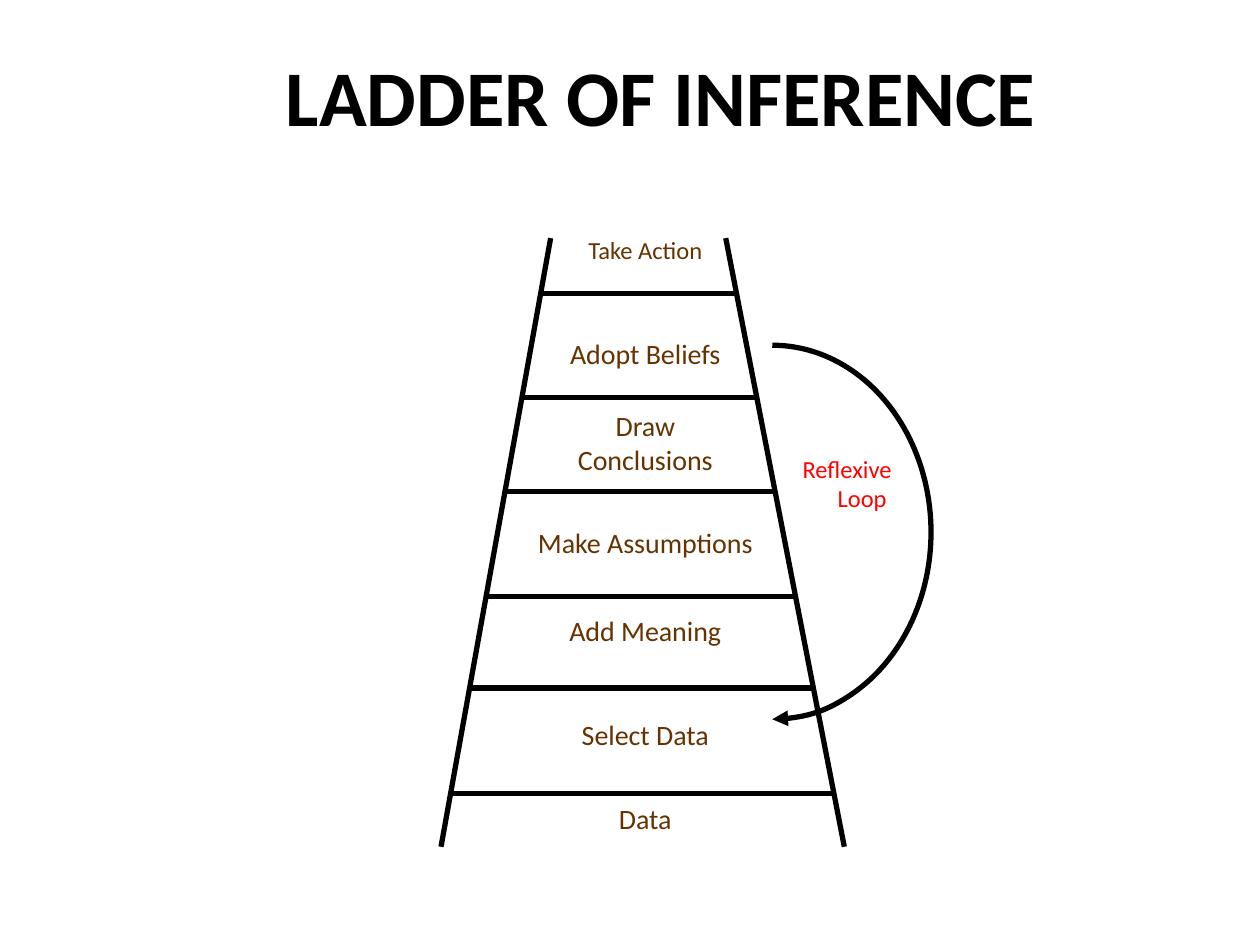
from lxml import etree
from pptx import Presentation
from pptx.dml.color import RGBColor
from pptx.enum.shapes import MSO_CONNECTOR, MSO_SHAPE
from pptx.enum.text import MSO_ANCHOR, PP_ALIGN
from pptx.oxml.ns import qn
from pptx.util import Cm, Pt

LEFT, CENTER = PP_ALIGN.LEFT, PP_ALIGN.CENTER
MIDDLE = MSO_ANCHOR.MIDDLE
STRAIGHT = MSO_CONNECTOR.STRAIGHT
ARC = MSO_SHAPE.ARC

BLACK = RGBColor(0x00, 0x00, 0x00)
BROWN = RGBColor(0x66, 0x33, 0x00)
RED = RGBColor(0xFF, 0x00, 0x00)

TITLE_FONT = {"name": "Calibri", "size": Pt(45), "bold": True}
TOP_STEP_FONT = {"name": "Calibri", "size": Pt(14)}
STEP_FONT = {"name": "Calibri", "size": Pt(16)}
LOOP_FONT = {"name": "Calibri", "size": Pt(14)}

# Step wording, font and space above in points, from the top of the ladder
STEPS = [
    ("Take Action", TOP_STEP_FONT, 0),
    ("Adopt Beliefs", STEP_FONT, 41),
    ("Draw", STEP_FONT, 22),
    ("Conclusions", STEP_FONT, 0),
    ("Make Assumptions", STEP_FONT, 28.5),
    ("Add Meaning", STEP_FONT, 31),
    ("Select Data", STEP_FONT, 40.5),
    ("Data", STEP_FONT, 28.5),
]
# Depth of each rung below the top of the rails, in cm
RUNGS = [1.12, 3.21, 5.11, 7.23, 9.07, 11.19]


def write_line(paragraph, wording, font, color, align=CENTER, space=0):
    run = paragraph.add_run()
    run.text = wording
    for attribute, value in font.items():
        setattr(run.font, attribute, value)
    run.font.color.rgb = color
    paragraph.alignment = align
    paragraph.space_before = Pt(space)


def add_text(slide, left, top, width, height, lines):
    frame = slide.shapes.add_textbox(
        Cm(left), Cm(top), Cm(width), Cm(height)).text_frame
    frame.word_wrap = True
    for index, line in enumerate(lines):
        paragraph = frame.add_paragraph() if index else frame.paragraphs[0]
        write_line(paragraph, *line)


def add_bar(slide, x1, y1, x2, y2):
    bar = slide.shapes.add_connector(
        STRAIGHT, Cm(x1), Cm(y1), Cm(x2), Cm(y2))
    bar.line.color.rgb = BLACK
    bar.line.width = Pt(3)
    etree.SubElement(bar._element.spPr, qn("a:effectLst"))


def add_title(slide, left, top, width, height):
    title = slide.shapes.title
    title.left, title.top = Cm(left), Cm(top)
    title.width, title.height = Cm(width), Cm(height)
    title.text_frame.vertical_anchor = MIDDLE
    write_line(title.text_frame.paragraphs[0], "LADDER OF INFERENCE",
               TITLE_FONT, BLACK)


def add_ladder(slide, left, top, width, height):
    # Steps between the rungs
    add_text(slide, left + 0.74, top - 0.18, 6.76, 14.43,
             [(wording, font, BROWN, CENTER, space)
              for wording, font, space in STEPS])

    # Rails lean towards each other at the top
    left_lean, right_lean = 2.21, 2.39
    right = left + width
    add_bar(slide, left + left_lean, top, left, top + height)
    add_bar(slide, right - right_lean, top, right, top + height)

    # Rungs reach from rail to rail
    for depth in RUNGS:
        rise = 1 - depth / height
        add_bar(slide, left + left_lean * rise, top + depth,
                right - right_lean * rise, top + depth)


def add_reflexive_loop(slide, left, top, width, height):
    # Right half of an ellipse, ending in an arrowhead
    loop = slide.shapes.add_shape(
        ARC, Cm(left), Cm(top), Cm(width), Cm(height))
    loop.adjustments[0] = 162  # 270 degrees
    loop.adjustments[1] = 54  # 90 degrees
    loop.shadow.inherit = False
    loop.fill.background()
    loop.line.color.rgb = BLACK
    loop.line.width = Pt(3)
    etree.SubElement(loop.line._get_or_add_ln(), qn("a:tailEnd"),
                     type="triangle")

    # Label inside the loop
    add_text(slide, left + 3.56, top + 2.06, 2.9, 2.41,
             [("Reflexive", LOOP_FONT, RED, LEFT),
              ("Loop", LOOP_FONT, RED, CENTER)])


def main():
    prs = Presentation()
    prs.slide_width, prs.slide_height = Cm(25.4), Cm(19.05)
    slide = prs.slides.add_slide(prs.slide_layouts[5])
    add_ladder(slide, 8.89, 4.8, 8.13, 12.27)
    add_reflexive_loop(slide, 12.37, 6.96, 6.4, 7.54)
    add_title(slide, 3.38, 0.64, 19.89, 2.57)
    prs.save("out.pptx")


if __name__ == "__main__":
    main()
